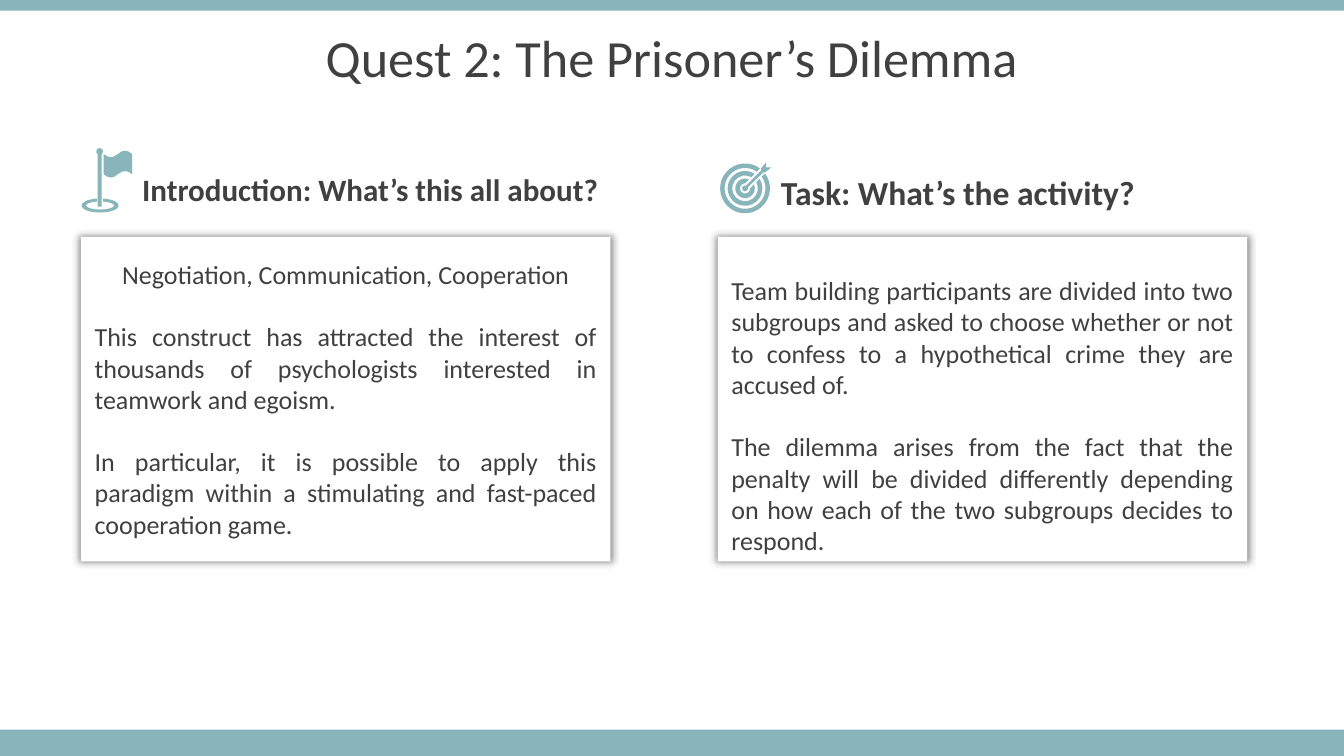
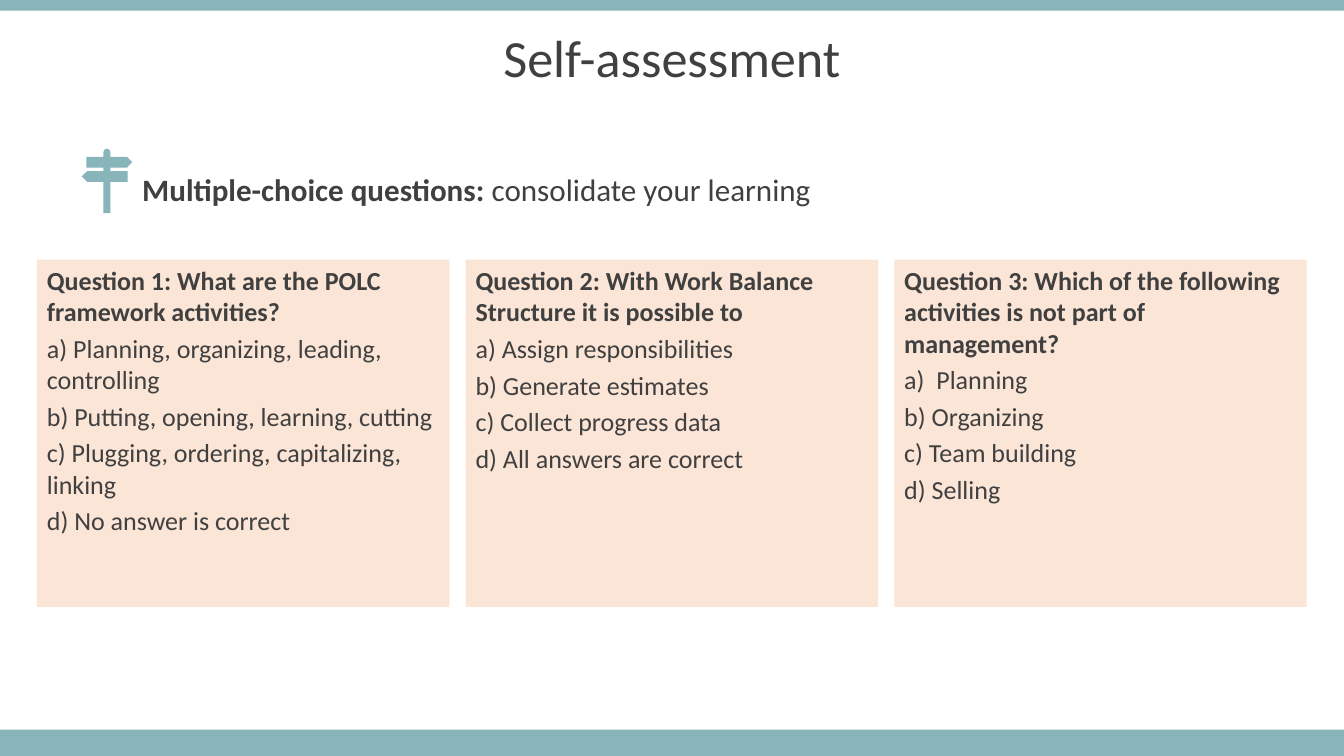
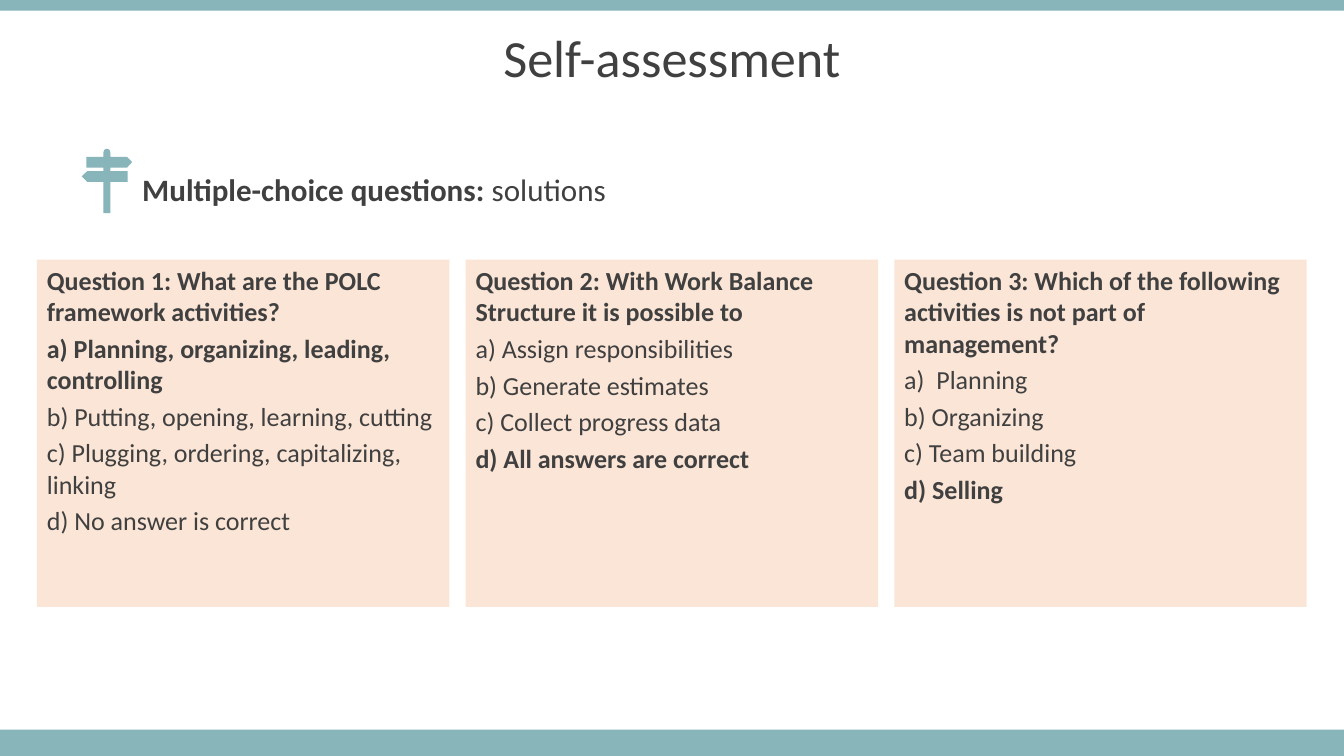
from dataclasses import dataclass
from math import asin, ceil, cos, degrees, radians, sin, tan

from lxml.etree import SubElement
from pptx import Presentation
from pptx.dml.color import RGBColor
from pptx.enum.shapes import MSO_SHAPE as Preset
from pptx.enum.text import MSO_ANCHOR as Anchor, PP_ALIGN as Align
from pptx.oxml.ns import qn
from pptx.slide import Slide
from pptx.util import Pt

Point = tuple[float, float]
Step = tuple[Point, ...]
Contour = list[Step]


@dataclass(frozen=True)
class Theme:
    teal: RGBColor = RGBColor(0x87, 0xB5, 0xBA)
    ink: RGBColor = RGBColor(0x40, 0x40, 0x40)
    white: RGBColor = RGBColor(0xFF, 0xFF, 0xFF)
    peach: RGBColor = RGBColor(0xFB, 0xE5, 0xD6)
    font: str = "Calibri"
    title_size: float = 37.3
    heading_size: float = 22.2
    task_size: float = 24
    body_size: float = 18.6
    body_line: float = 22.3


THEME = Theme()
WIDTH, HEIGHT = 960, 540


@dataclass(frozen=True)
class Box:
    left: float
    top: float
    width: float
    height: float


@dataclass(frozen=True)
class Span:
    text: str
    bold: bool = False


@dataclass(frozen=True)
class Para:
    spans: tuple[Span, ...]
    size: float = THEME.body_size
    align: Align = Align.LEFT
    before: float = 0
    line_spacing: float = 1


@dataclass(frozen=True)
class Card:
    left: float
    top_inset: float
    paras: tuple[Para, ...]


@dataclass(frozen=True)
class Question:
    prompt: str
    answers: tuple[str, ...]
    solution: int


CARDS = (
    Card(58, 15.3, (
        Para((Span("Negotiation, Communication, Cooperation"),), align=Align.CENTER),
        Para((Span("This construct has attracted the interest of thousands of psychologists "
                   "interested in teamwork and egoism."),),
             align=Align.JUSTIFY, before=THEME.body_line),
        Para((Span("In particular, it is possible to apply this paradigm within a stimulating "
                   "and fast-paced cooperation game."),),
             align=Align.JUSTIFY, before=THEME.body_line),
    )),
    Card(512.8, 27, (
        Para((Span("Team building participants are divided into two subgroups and asked to "
                   "choose whether or not to confess to a hypothetical crime they are "
                   "accused of."),), align=Align.JUSTIFY),
        Para((Span("The dilemma arises from the fact that the penalty will be divided "
                   "differently depending on how each of the two subgroups decides to "
                   "respond."),), align=Align.JUSTIFY, before=THEME.body_line),
    )),
)

QUESTIONS = (
    Question("Question 1: What are the POLC framework activities?", (
        "a) Planning, organizing, leading, controlling",
        "b) Putting, opening, learning, cutting",
        "c) Plugging, ordering, capitalizing, linking",
        "d) No answer is correct"), 0),
    Question("Question 2: With Work Balance Structure it is possible to", (
        "a) Assign responsibilities",
        "b) Generate estimates",
        "c) Collect progress data",
        "d) All answers are correct"), 3),
    Question("Question 3: Which of the following activities is not part of management?", (
        "a)  Planning",
        "b) Organizing",
        "c) Team building",
        "d) Selling"), 3),
)


def lines(*points: Point) -> Contour:
    return [(point,) for point in points]


def arc(cx: float, cy: float, rx: float, ry: float, start: float, end: float) -> Contour:
    count = ceil(abs(end - start) / 90)
    turn = radians(end - start) / count
    pull = 4 / 3 * tan(turn / 4)

    def at(angle: float, reach: float = 0) -> Point:
        return (cx + rx * (cos(angle) - reach * sin(angle)),
                cy + ry * (sin(angle) + reach * cos(angle)))

    angles = [radians(start) + turn * i for i in range(count + 1)]
    curves = [(at(a, pull), at(b, -pull), at(b)) for a, b in zip(angles, angles[1:])]
    return [(at(angles[0]),), *curves]


def open_ring(cx: float, cy: float, outer: Point, inner: Point,
              gap_at: float, half_gap: float) -> Contour:
    outside, inside = (degrees(asin(half_gap / radii[0])) for radii in (outer, inner))
    return (arc(cx, cy, *outer, gap_at + outside, gap_at + 360 - outside)
            + arc(cx, cy, *inner, gap_at + 360 - inside, gap_at + inside))


def flag_icon() -> list[Contour]:
    base = open_ring(13.3, 41, (13.3, 5), (10, 2.9), -90, 2.2)
    pole = arc(13, 2.4, 2.4, 2.4, 125, 415) + lines((14.4, 41.8), (11.6, 41.8))
    left, middle, right, top, bottom = 15.9, 26, 36.2, 4.2, 18.7
    cloth = [((left, top),),
             ((left + 3.7, top + 3.1), (middle - 3.7, top + 3.1), (middle, top)),
             ((middle + 3.7, top - 3.1), (right - 3.7, top - 3.1), (right, top)),
             ((right, bottom),),
             ((right - 3.7, bottom - 3.1), (middle + 3.7, bottom - 3.1), (middle, bottom)),
             ((middle - 3.7, bottom + 3.1), (left + 3.7, bottom + 3.1), (left, bottom))]
    return [base, pole, cloth]


def target_icon() -> list[Contour]:
    cx, cy = 18, 18.6
    rings = [open_ring(cx, cy, (outer, outer), (inner, inner), -45, 2.5)
             for outer, inner in ((17.8, 14.6), (12.4, 9.2), (7, 3.7))]
    arrow = arc(cx, cy, 2.1, 2.1, -20, 290) + lines(
        (29.5, 5.8), (29.5, 4.2), (33.1, 0), (33.1, 3.6), (36.7, 3.6), (32.4, 7.2), (31, 7.2))
    return rings + [arrow]


def signpost_icon() -> list[Contour]:
    cap = arc(18, 2.5, 2.5, 2.5, 180, 360)
    right = lines((20.5, 5.9), (32.4, 5.9), (36, 9.6), (32.4, 13.5), (20.5, 13.5), (20.5, 16),
                  (32.8, 16), (32.8, 23.8), (20.5, 23.8), (20.5, 46.1))
    left = lines((15.5, 46.1), (15.5, 23.8), (4, 23.8), (0, 19.8), (4, 16), (15.5, 16),
                 (15.5, 13.5), (3.3, 13.5), (3.3, 5.9), (15.5, 5.9))
    return [cap + right + left]


def add_icon(page: Slide, left: float, top: float, contours: list[Contour]) -> None:
    outlines = [[(Pt(x), Pt(y)) for step in contour for x, y in step] for contour in contours]
    builder = page.shapes.build_freeform(*outlines[0][0], scale=1.0)
    for index, outline in enumerate(outlines):
        if index:
            builder.move_to(*outline[0])
        builder.add_line_segments(outline[1:], close=False)
        builder.add_line_segments([], close=True)
    icon = builder.convert_to_shape(Pt(left), Pt(top))
    bend(icon, contours)
    paint(icon, THEME.teal)


def bend(icon, contours: list[Contour]) -> None:
    segments = iter(list(icon._element.iter(qn("a:lnTo"))))
    for contour in contours:
        for step in contour[1:]:
            first, *others = [next(segments) for _ in step]
            if others:
                first.tag = qn("a:cubicBezTo")
            for other in others:
                first.append(other[0])
                other.getparent().remove(other)


def paint(shape, color: RGBColor) -> None:
    shape.shadow.inherit = False
    shape.fill.solid()
    shape.fill.fore_color.rgb = color
    shape.line.fill.background()


def add_rect(page: Slide, box: Box, color: RGBColor):
    rect = page.shapes.add_shape(
        Preset.RECTANGLE, Pt(box.left), Pt(box.top), Pt(box.width), Pt(box.height))
    paint(rect, color)
    return rect


def add_glow(shape) -> None:
    effects = shape._element.spPr.find(qn("a:effectLst"))
    shadow = SubElement(effects, qn("a:outerShdw"), blurRad=str(Pt(5)), dist="0", dir="0",
                        sx="101000", sy="101000", algn="ctr", rotWithShape="0")
    color = SubElement(shadow, qn("a:srgbClr"), val="000000")
    SubElement(color, qn("a:alpha"), val="40000")


def write(shape, paras: tuple[Para, ...], anchor: Anchor) -> None:
    frame = shape.text_frame
    frame.word_wrap = True
    frame.vertical_anchor = anchor
    for index, para in enumerate(paras):
        line = frame.add_paragraph() if index else frame.paragraphs[0]
        line.alignment = para.align
        line.space_before = Pt(para.before)
        line.line_spacing = para.line_spacing
        for span in para.spans:
            run = line.add_run()
            run.text = span.text
            run.font.name = THEME.font
            run.font.size = Pt(para.size)
            run.font.bold = span.bold
            run.font.color.rgb = THEME.ink


def add_text(page: Slide, box: Box, para: Para) -> None:
    label = page.shapes.add_textbox(
        Pt(box.left), Pt(box.top), Pt(box.width), Pt(box.height))
    write(label, (para,), Anchor.MIDDLE)


def add_heading(page: Slide, width: float, *spans: Span) -> None:
    add_text(page, Box(94.5, 123.1, width, 29.5),
             Para(spans, THEME.heading_size, before=10, line_spacing=0.8))


def add_page(deck, title: str) -> Slide:
    page = deck.slides.add_slide(deck.slide_layouts[6])
    add_rect(page, Box(0, 521.2, WIDTH, 18.8), THEME.teal)
    add_rect(page, Box(0, 0, WIDTH, 7.6), THEME.teal)
    add_text(page, Box(0, 13, WIDTH, 60.5),
             Para((Span(title),), THEME.title_size, Align.CENTER, 10, 0.9))
    return page


def add_card(page: Slide, card: Card) -> None:
    panel = add_rect(page, Box(card.left, 169.2, 378, 231.8), THEME.white)
    add_glow(panel)
    frame = panel.text_frame
    frame.margin_left = frame.margin_right = Pt(9.6)
    frame.margin_top = Pt(card.top_inset)
    frame.margin_bottom = Pt(0)
    write(panel, card.paras, Anchor.TOP)


def add_quest_page(deck) -> None:
    page = add_page(deck, "Quest 2: The Prisoner’s Dilemma")
    for card in CARDS:
        add_card(page, card)
    add_icon(page, 58.2, 105.8, flag_icon())
    add_icon(page, 514.2, 116, target_icon())
    add_heading(page, 341.3, Span("Introduction: What’s this all about?", True))
    add_text(page, Box(550.8, 122.4, 341.3, 29.5),
             Para((Span("Task: What’s the activity?", True),), THEME.task_size, before=4.8))


def add_quiz_page(deck, subtitle: str, solved: bool) -> None:
    page = add_page(deck, "Self-assessment")
    add_heading(page, 642.2, Span("Multiple-choice questions: ", True), Span(subtitle))
    add_icon(page, 58.4, 106.2, signpost_icon())
    width, gap = 294.6, 11.6
    for column, question in enumerate(QUESTIONS):
        left = 26.4 + column * (width + gap)
        panel = add_rect(page, Box(left, 185.5, width, 248), THEME.peach)
        spans = [Span(question.prompt, True)]
        spans += [Span(answer, solved and index == question.solution)
                  for index, answer in enumerate(question.answers)]
        write(panel, tuple(Para((span,), before=3.8) for span in spans), Anchor.TOP)


def main() -> None:
    deck = Presentation()
    deck.slide_width, deck.slide_height = Pt(WIDTH), Pt(HEIGHT)
    add_quest_page(deck)
    add_quiz_page(deck, "consolidate your learning", False)
    add_quiz_page(deck, "solutions", True)
    deck.save("out.pptx")


if __name__ == "__main__":
    main()
